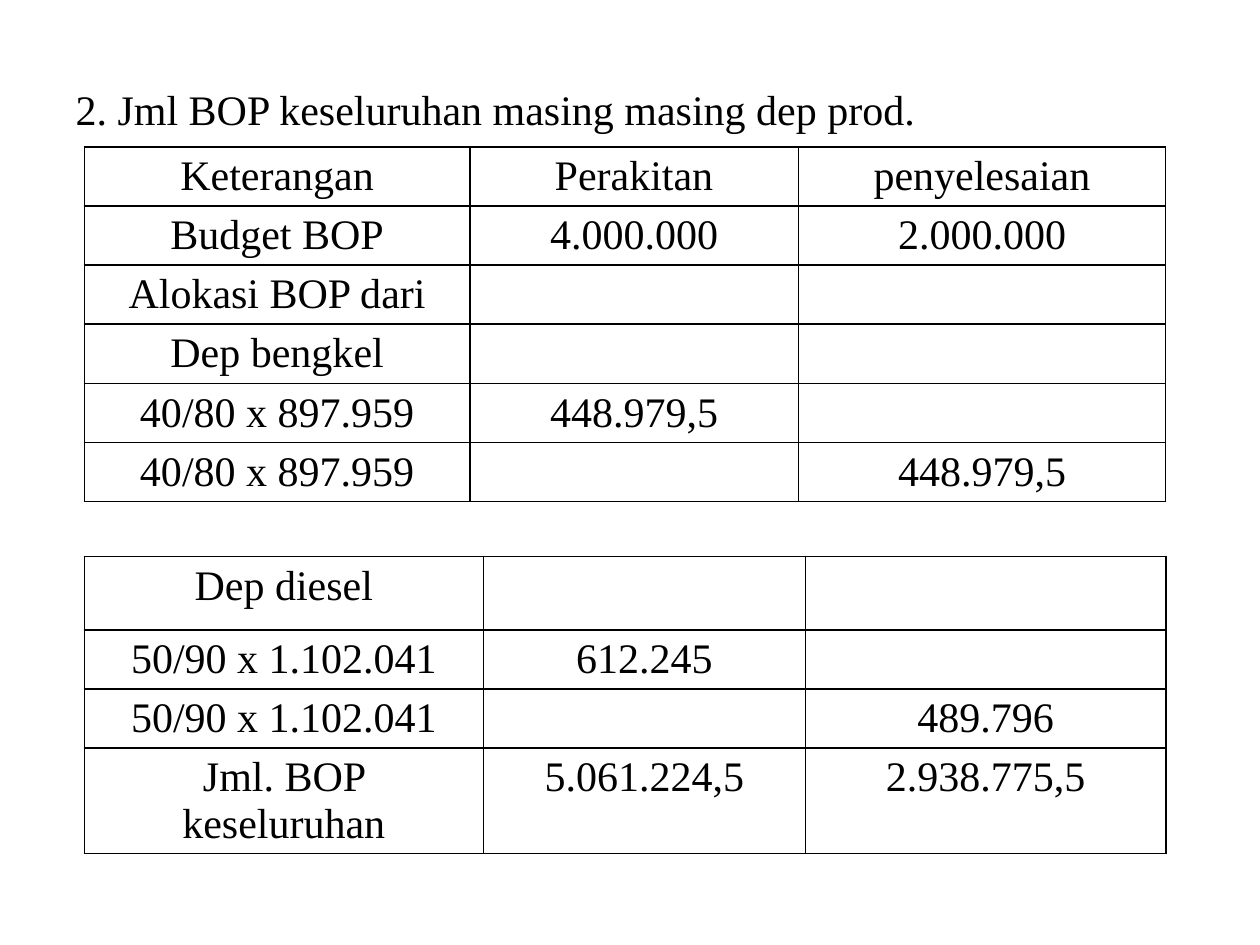
import pptx
import pptx.util
import pptx.dml.color
import pptx.enum.text
import pptx.oxml
import pptx.oxml.ns
from lxml import etree

Pt = pptx.util.Pt
COLORS = {"text": "000000", "border": "000000"}
FONT = "Times New Roman"
FONT_SIZE = 24
LEFT = 48.2
ROW_HEIGHT = 33.75

# Content
HEADING = "2. Jml BOP keseluruhan masing masing dep prod."
TABLES = [
    {
        "top": 84,
        "columns": [220.3, 187.7, 210],
        "heights": [ROW_HEIGHT] * 6,
        "rows": [
            ("Keterangan", "Perakitan", "penyelesaian"),
            ("Budget BOP", "4.000.000", "2.000.000"),
            ("Alokasi BOP dari", "", ""),
            ("Dep bengkel", "", ""),
            ("40/80 x 897.959", "448.979,5", ""),
            ("40/80 x 897.959", "", "448.979,5"),
        ],
    },
    {
        "top": 318,
        "columns": [228, 184, 206],
        "heights": [42, ROW_HEIGHT, ROW_HEIGHT, 60],
        "rows": [
            ("Dep diesel", "", ""),
            ("50/90 x 1.102.041", "612.245", ""),
            ("50/90 x 1.102.041", "", "489.796"),
            ("Jml. BOP keseluruhan", "5.061.224,5", "2.938.775,5"),
        ],
    },
]


def format_text(text_frame, alignment):
    for paragraph in text_frame.paragraphs:
        paragraph.alignment = alignment
        for font in [paragraph.font] + [run.font for run in paragraph.runs]:
            font.name = FONT
            font.size = Pt(FONT_SIZE)
            font.color.rgb = pptx.dml.color.RGBColor.from_string(COLORS["text"])


def add_borders(cell):
    properties = cell._tc.get_or_add_tcPr()
    for index, side in enumerate(("lnL", "lnR", "lnT", "lnB")):
        line = etree.Element(pptx.oxml.ns.qn("a:" + side), w=str(Pt(1)))
        fill = etree.SubElement(line, pptx.oxml.ns.qn("a:solidFill"))
        etree.SubElement(fill, pptx.oxml.ns.qn("a:srgbClr"), val=COLORS["border"])
        properties.insert(index, line)


def add_grid(slide, content):
    rows, columns, heights = content["rows"], content["columns"], content["heights"]
    table = slide.shapes.add_table(
        len(rows), len(columns), Pt(LEFT), Pt(content["top"]),
        Pt(sum(columns)), Pt(sum(heights))).table
    table.first_row = False
    table.horz_banding = False
    for column, width in zip(table.columns, columns):
        column.width = Pt(width)
    for row, height, values in zip(table.rows, heights, rows):
        row.height = Pt(height)
        for cell, value in zip(row.cells, values):
            cell.text_frame.text = value
            format_text(cell.text_frame, pptx.enum.text.PP_ALIGN.CENTER)
            cell.fill.background()
            add_borders(cell)


def main():
    presentation = pptx.Presentation()
    presentation.slide_width = Pt(720)
    presentation.slide_height = Pt(540)
    slide = presentation.slides.add_slide(presentation.slide_layouts[5])

    # Heading
    title = slide.shapes.title
    title.left, title.top, title.width, title.height = Pt(36), Pt(36), Pt(648), Pt(44)
    title.text_frame.text = HEADING
    title.text_frame.vertical_anchor = pptx.enum.text.MSO_ANCHOR.BOTTOM
    format_text(title.text_frame, pptx.enum.text.PP_ALIGN.LEFT)

    # Overhead tables
    for content in TABLES:
        add_grid(slide, content)

    presentation.save("out.pptx")


if __name__ == "__main__":
    main()
